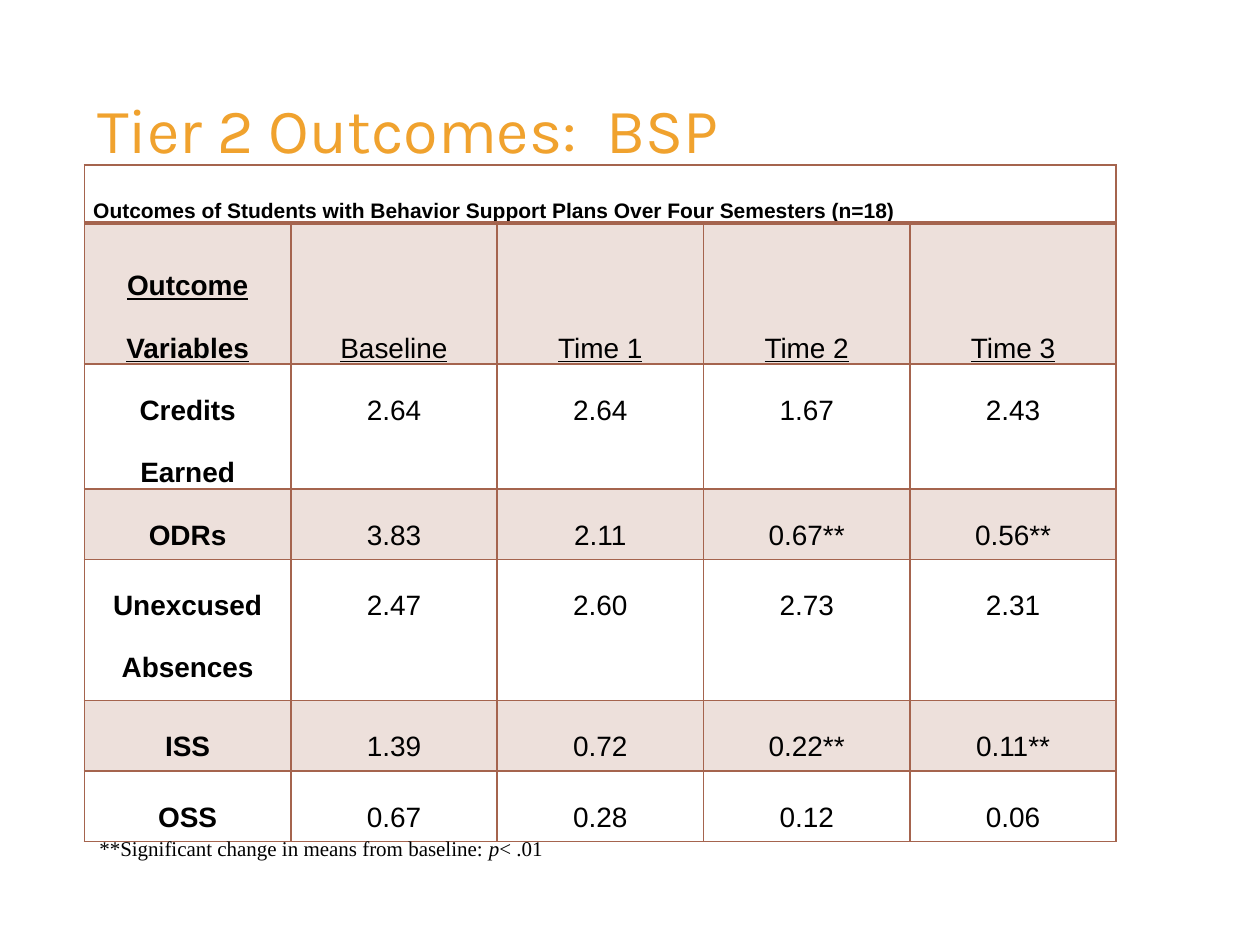
from lxml import etree
from pptx import Presentation
from pptx.dml.color import RGBColor
from pptx.enum.text import MSO_ANCHOR, PP_ALIGN
from pptx.oxml.ns import qn
from pptx.util import Inches, Pt

TOP, MIDDLE, BOTTOM = MSO_ANCHOR.TOP, MSO_ANCHOR.MIDDLE, MSO_ANCHOR.BOTTOM
LEFT, CENTER = PP_ALIGN.LEFT, PP_ALIGN.CENTER

COLORS = {"title": "F0A22E", "text": "000000", "rule": "A5644E"}
BAND_OPACITY = 20
ROW_HEIGHTS = [0.46, 1.12, 0.99, 0.56, 1.12, 0.56, 0.56]
CAPTION = "Outcomes of Students with Behavior Support Plans Over Four Semesters (n=18)"
OUTCOMES = [
    ["Outcome Variables", "Baseline", "Time 1", "Time 2", "Time 3"],
    ["Credits Earned", "2.64", "2.64", "1.67", "2.43"],
    ["ODRs", "3.83", "2.11", "0.67**", "0.56**"],
    ["Unexcused Absences", "2.47", "2.60", "2.73", "2.31"],
    ["ISS", "1.39", "0.72", "0.22**", "0.11**"],
    ["OSS", "0.67", "0.28", "0.12", "0.06"],
]


def apply(target, formats):
    for name, value in formats.items():
        setattr(target, name, value)


def add_run(paragraph, text, color, **formats):
    run = paragraph.add_run()
    run.text = text
    run.font.color.rgb = RGBColor.from_string(COLORS[color])
    apply(run.font, formats)


def add_title(slide, left, top, width, height):
    title = slide.shapes.title
    apply(title, {"left": left, "top": top, "width": width, "height": height})
    apply(title.text_frame, {"vertical_anchor": TOP, "word_wrap": True})
    heading = title.text_frame.paragraphs[0]
    heading.alignment = LEFT
    add_run(heading, "Tier 2 Outcomes:  BSP", "title", name="Karla", size=Pt(36))


def add_borders(cell, widths):
    properties = cell._tc.get_or_add_tcPr()
    for side, width in widths.items():
        line = etree.SubElement(properties, qn(f"a:{side}"), w=str(Pt(width)))
        solid = etree.SubElement(line, qn("a:solidFill"))
        etree.SubElement(solid, qn("a:srgbClr"), val=COLORS["rule"])


def fill_band(cell):
    cell.fill.solid()
    cell.fill.fore_color.rgb = RGBColor.from_string(COLORS["rule"])
    color = cell._tc.tcPr.find(qn("a:solidFill")).find(qn("a:srgbClr"))
    etree.SubElement(color, qn("a:alpha"), val=str(BAND_OPACITY * 1000))


def write_cell(cell, text, anchor, alignment, spacing, **formats):
    apply(cell, {"margin_left": Inches(0.07), "margin_right": Inches(0.07),
                 "margin_top": 0, "margin_bottom": 0, "vertical_anchor": anchor})
    paragraph = cell.text_frame.paragraphs[0]
    apply(paragraph, {"alignment": alignment, "line_spacing": spacing})
    add_run(paragraph, text, "text", name="Arial", **formats)


def add_outcomes(slide, left, top, width, height):
    row_count, column_count = len(ROW_HEIGHTS), len(OUTCOMES[0])
    table = slide.shapes.add_table(row_count, column_count, left, top, width, height).table
    apply(table, {"first_row": False, "horz_banding": False})
    for column in table.columns:
        column.width = width // column_count
    for row_index, row_height in enumerate(ROW_HEIGHTS):
        table.rows[row_index].height = Inches(row_height)
        for cell in table.rows[row_index].cells:
            add_borders(cell, {"lnL": 1, "lnR": 1,
                               "lnT": 2 if row_index == 1 else 1,
                               "lnB": 2 if row_index == 0 else 1})
            if row_index % 2:
                fill_band(cell)
            else:
                cell.fill.background()

    caption = table.cell(0, 0)
    caption.merge(table.cell(0, column_count - 1))
    write_cell(caption, CAPTION, BOTTOM, LEFT, 1.15, size=Pt(12), bold=True)
    for row_index, values in enumerate(OUTCOMES, start=1):
        is_header = row_index == 1
        for column_index, value in enumerate(values):
            write_cell(table.cell(row_index, column_index), value,
                       BOTTOM if is_header else TOP, CENTER, 2.0,
                       size=Pt(16), bold=column_index == 0, underline=is_header)


def add_footnote(slide, left, top, width, height):
    frame = slide.shapes.add_textbox(left, top, width, height).text_frame
    apply(frame, {"word_wrap": True, "vertical_anchor": MIDDLE})
    note = frame.paragraphs[0]
    for text, italic in [("**Significant change in means from baseline: ", False),
                         ("p", True), ("< .01", False)]:
        add_run(note, text, "text", name="Times New Roman", size=Pt(12), italic=italic)


def main():
    presentation = Presentation()
    apply(presentation, {"slide_width": Inches(10), "slide_height": Inches(7.5)})
    slide = presentation.slides.add_slide(presentation.slide_layouts[5])
    add_title(slide, Inches(0.67), Inches(0.67), Inches(6.94), Inches(1.44))
    add_outcomes(slide, Inches(0.67), Inches(1.31), Inches(8.19), Inches(sum(ROW_HEIGHTS)))
    add_footnote(slide, Inches(0.69), Inches(6.58), Inches(11.46), Inches(0.3))
    presentation.save("out.pptx")


if __name__ == "__main__":
    main()
